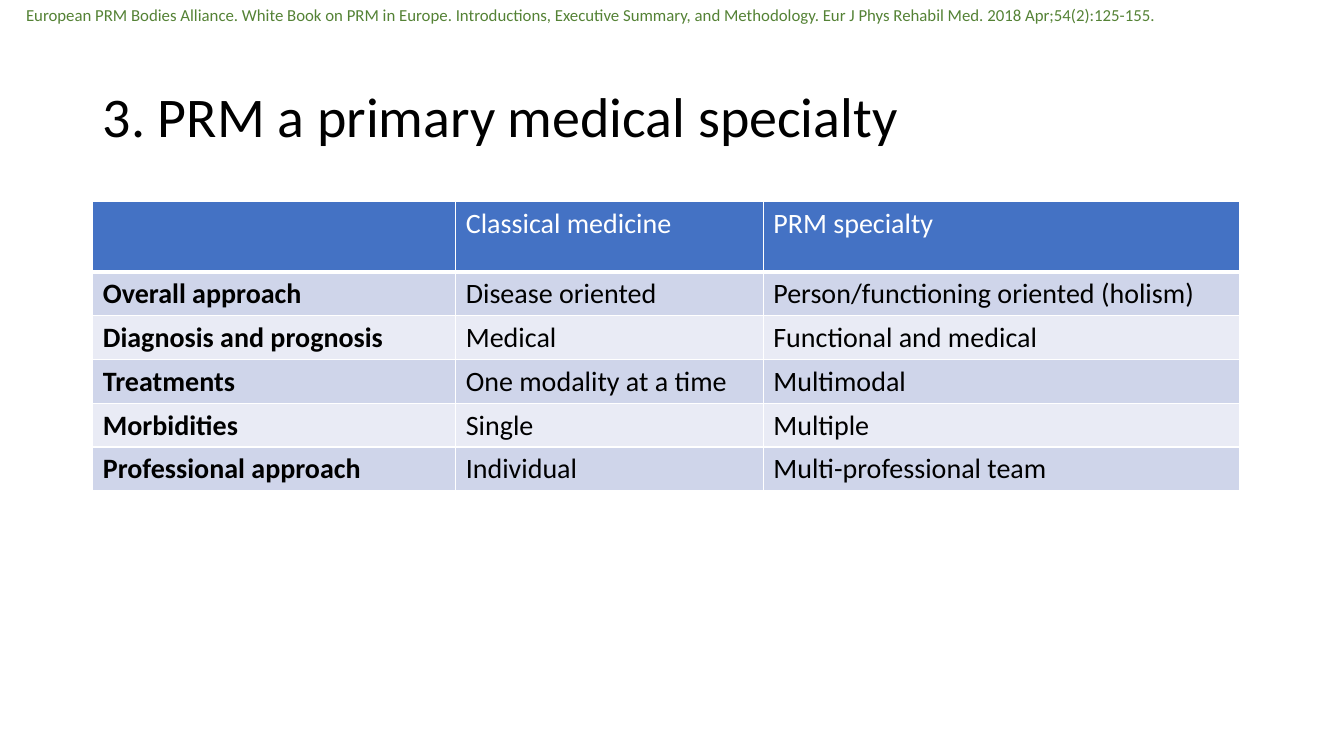
import pptx
import pptx.dml.color
import pptx.enum.text
import pptx.oxml
import pptx.oxml.ns
import pptx.util

Inches = pptx.util.Inches
COLORS = {
    "header": "4472C4",
    "band_dark": "CFD5EA",
    "band_light": "E9EBF5",
    "white": "FFFFFF",
    "black": "000000",
    "citation": "548235",
}
CITATION = (
    "European PRM Bodies Alliance. White Book on PRM in Europe. Introductions, "
    "Executive Summary, and Methodology. Eur J Phys Rehabil Med. 2018 Apr;54(2):125-155."
)
COMPARISON = [
    ("", "Classical medicine", "PRM specialty"),
    ("Overall approach", "Disease oriented", "Person/functioning oriented (holism)"),
    ("Diagnosis and prognosis", "Medical", "Functional and medical"),
    ("Treatments", "One modality at a time", "Multimodal"),
    ("Morbidities", "Single", "Multiple"),
    ("Professional approach", "Individual", "Multi-professional team"),
]
COLUMN_WIDTHS = (3.6, 3.05, 4.72)
HEADER_HEIGHT, ROW_HEIGHT = 0.7, 0.41


class SlideBuilder:
    """Holds the style and the current slide, and adds each kind of element."""

    def __init__(self, page, font_name="Calibri"):
        self.page = page
        self.font_name = font_name

    def color(self, name):
        return pptx.dml.color.RGBColor.from_string(COLORS[name])

    def style(self, para, size, color, bold=False):
        para.font.name = self.font_name
        para.font.size = pptx.util.Pt(size)
        para.font.bold = bold
        para.font.color.rgb = self.color(color)

    def place(self, shape, left, top, width, height):
        shape.left, shape.top = Inches(left), Inches(top)
        shape.width, shape.height = Inches(width), Inches(height)

    def title(self, text, *area):
        title = self.page.shapes.title
        self.place(title, *area)
        frame = title.text_frame
        frame.text = text
        frame.word_wrap = True
        frame.auto_size = pptx.enum.text.MSO_AUTO_SIZE.NONE
        frame.vertical_anchor = pptx.enum.text.MSO_ANCHOR.MIDDLE
        para = frame.paragraphs[0]
        para.alignment = pptx.enum.text.PP_ALIGN.LEFT
        para.line_spacing = 0.9
        self.style(para, 40, "black")

    def text(self, text, size, color, *area):
        box = self.page.shapes.add_textbox(*map(Inches, area))
        frame = box.text_frame
        frame.word_wrap = True
        frame.auto_size = pptx.enum.text.MSO_AUTO_SIZE.SHAPE_TO_FIT_TEXT
        frame.text = text
        self.style(frame.paragraphs[0], size, color)

    def borders(self, cell, bottom_width):
        properties = cell._tc.get_or_add_tcPr()
        widths = {"lnL": 1, "lnR": 1, "lnT": 1, "lnB": bottom_width}
        for position, (side, width) in enumerate(widths.items()):
            line = pptx.oxml.parse_xml(
                f'<a:{side} {pptx.oxml.ns.nsdecls("a")} w="{pptx.util.Pt(width)}">'
                f'<a:solidFill><a:srgbClr val="{COLORS["white"]}"/></a:solidFill></a:{side}>'
            )
            properties.insert(position, line)

    def table(self, rows, widths, left, top):
        heights = [HEADER_HEIGHT] + [ROW_HEIGHT] * (len(rows) - 1)
        area = map(Inches, (left, top, sum(widths), sum(heights)))
        table = self.page.shapes.add_table(len(rows), len(widths), *area).table
        for column, width in zip(table.columns, widths):
            column.width = Inches(width)
        for row_index, texts in enumerate(rows):
            table.rows[row_index].height = Inches(heights[row_index])
            is_header = row_index == 0
            band = "band_dark" if row_index % 2 else "band_light"
            for column_index, text in enumerate(texts):
                cell = table.cell(row_index, column_index)
                cell.text = text
                cell.fill.solid()
                cell.fill.fore_color.rgb = self.color("header" if is_header else band)
                self.borders(cell, 3 if is_header else 1)
                self.style(
                    cell.text_frame.paragraphs[0],
                    20,
                    "white" if is_header else "black",
                    bold=column_index == 0 and not is_header,
                )


def main():
    deck = pptx.Presentation()
    deck.slide_width, deck.slide_height = Inches(13.33), Inches(7.5)
    builder = SlideBuilder(deck.slides.add_slide(deck.slide_layouts[5]))
    builder.text(CITATION, 12, "citation", 0.16, 0, 13.17, 0.3)
    builder.title("3. PRM a primary medical specialty", 0.92, 0.51, 11.5, 1.34)
    builder.table(COMPARISON, COLUMN_WIDTHS, 0.92, 2)
    deck.save("out.pptx")


if __name__ == "__main__":
    main()
